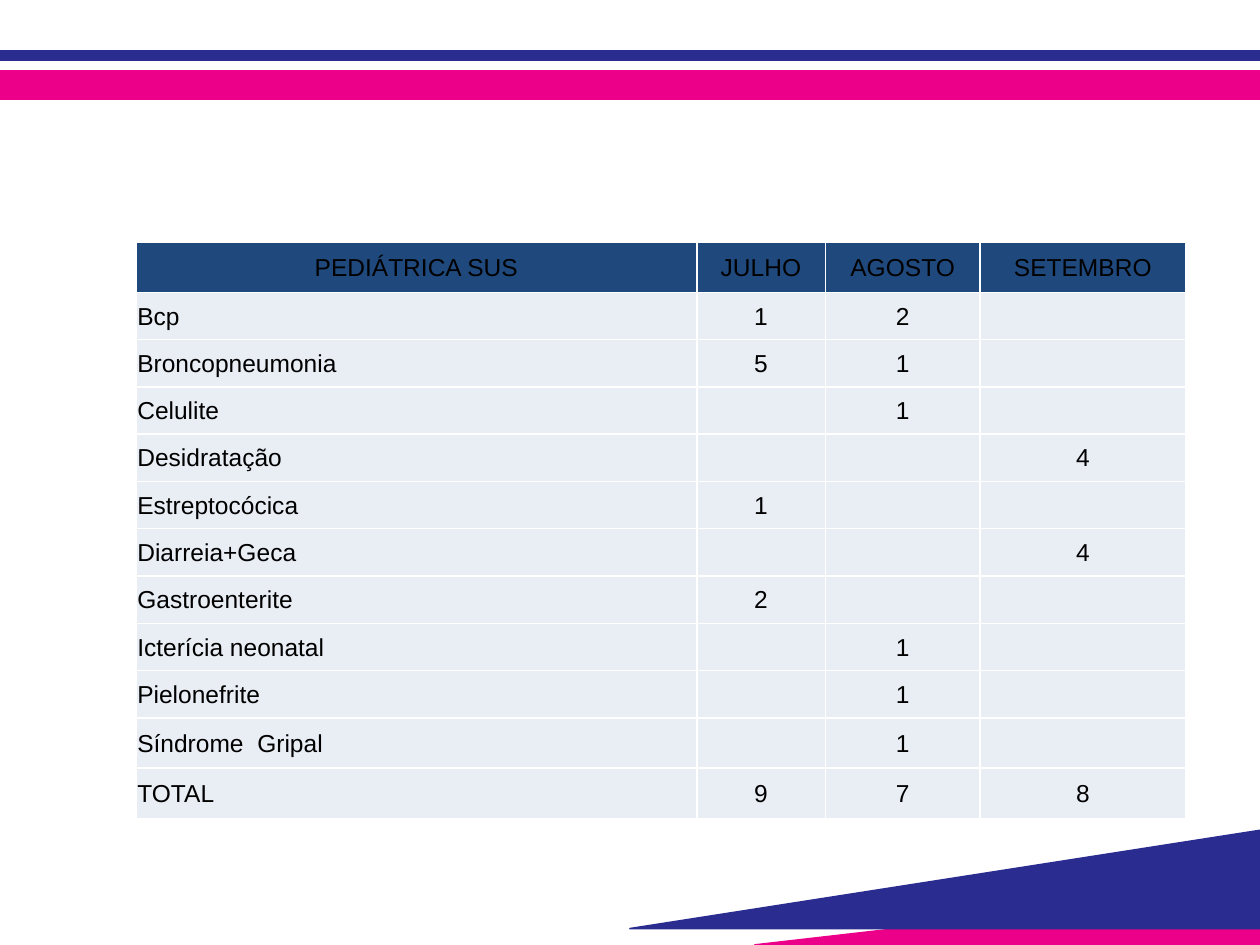
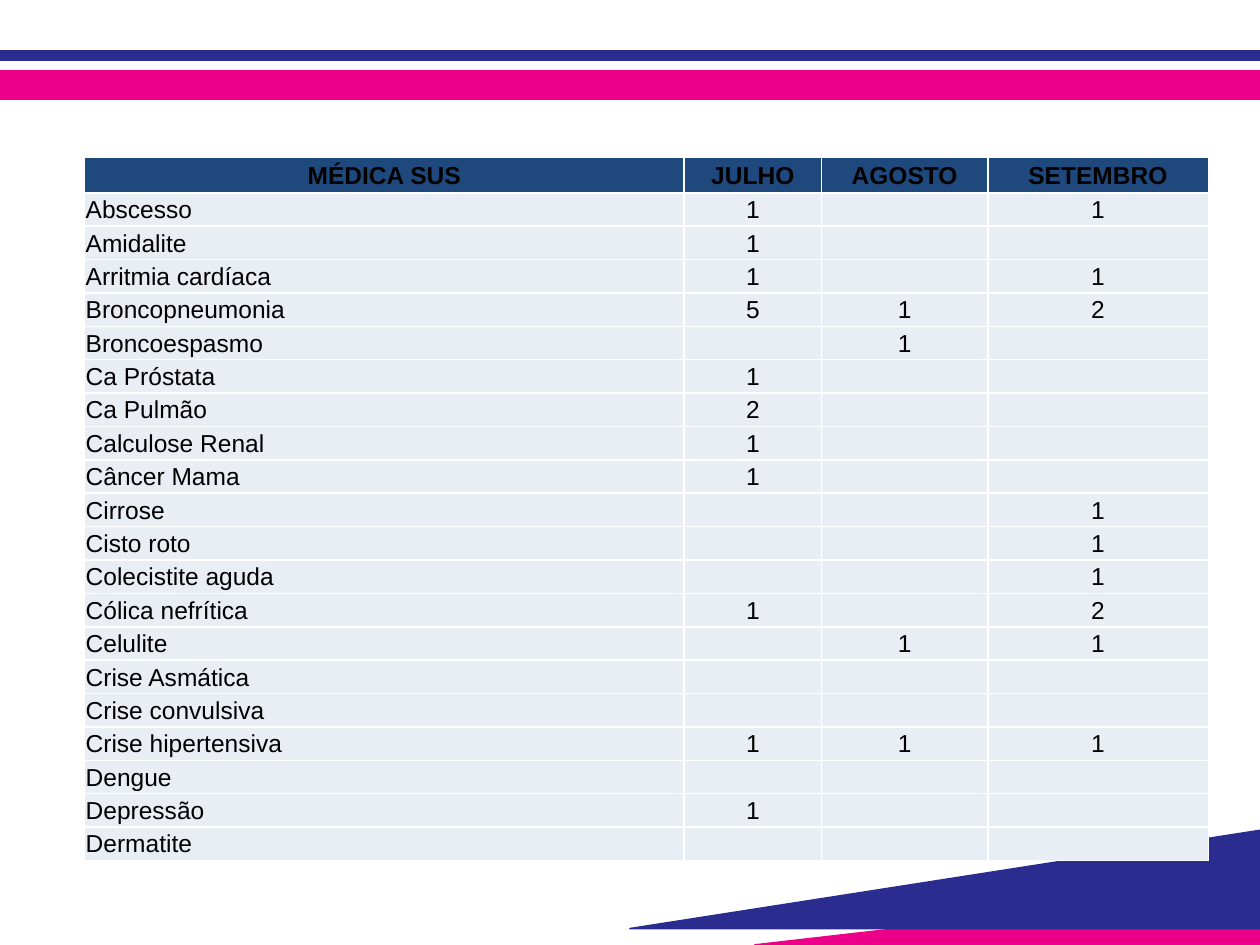
from lxml import etree
from pptx import Presentation
from pptx.dml.color import RGBColor
from pptx.enum.shapes import MSO_SHAPE as Shape
from pptx.enum.text import MSO_ANCHOR as Anchor, PP_ALIGN as Align
from pptx.oxml.ns import qn
from pptx.util import Inches, Pt

COLORS = {
    "navy": "2B2C90",
    "pink": "EC0089",
    "header": "1F497D",
    "body": "E9EDF4",
    "border": "FFFFFF",
    "text": "000000",
}
FONT = "Arial"
TEXT_SIZE = 14
BLANK_LAYOUT = 6
PAGE_WIDTH, PAGE_HEIGHT = 10, 7.5
MONTHS = ["JULHO", "AGOSTO", "SETEMBRO"]

PEDIATRIC = [
    ("Bcp", 1, 2, ""),
    ("Broncopneumonia", 5, 1, ""),
    ("Celulite", "", 1, ""),
    ("Desidratação", "", "", 4),
    ("Estreptocócica", 1, "", ""),
    ("Diarreia+Geca", "", "", 4),
    ("Gastroenterite", 2, "", ""),
    ("Icterícia neonatal", "", 1, ""),
    ("Pielonefrite", "", 1, ""),
    ("Síndrome  Gripal", "", 1, ""),
    ("TOTAL", 9, 7, 8),
]
MEDICAL = [
    ("Abscesso", 1, "", 1),
    ("Amidalite", 1, "", ""),
    ("Arritmia cardíaca", 1, "", 1),
    ("Broncopneumonia", 5, 1, 2),
    ("Broncoespasmo", "", 1, ""),
    ("Ca Próstata", 1, "", ""),
    ("Ca Pulmão", 2, "", ""),
    ("Calculose Renal", 1, "", ""),
    ("Câncer Mama", 1, "", ""),
    ("Cirrose", "", "", 1),
    ("Cisto roto", "", "", 1),
    ("Colecistite aguda", "", "", 1),
    ("Cólica nefrítica", 1, "", 2),
    ("Celulite", "", 1, 1),
    ("Crise Asmática", "", "", ""),
    ("Crise convulsiva", "", "", ""),
    ("Crise hipertensiva", 1, 1, 1),
    ("Dengue", "", "", ""),
    ("Depressão", 1, "", ""),
    ("Dermatite", "", "", ""),
]


def paint(shape, color):
    """Give a shape one colour for fill and outline."""
    shape.shadow.inherit = False
    shape.fill.solid()
    shape.fill.fore_color.rgb = RGBColor.from_string(COLORS[color])
    shape.line.color.rgb = RGBColor.from_string(COLORS[color])
    shape.line.width = Pt(0.96)


def add_band(page, top, height, color):
    band = page.shapes.add_shape(
        Shape.RECTANGLE, 0, Inches(top), Inches(PAGE_WIDTH), Inches(height))
    paint(band, color)


def add_wedge(page, box, color):
    """Right triangle rising from the lower left to the upper right of its box."""
    left, top, width, height = map(Inches, box)
    builder = page.shapes.build_freeform(left + width, top)
    builder.add_line_segments([(left, top + height), (left + width, top + height)])
    paint(builder.convert_to_shape(), color)


def add_frame(page):
    """Bands at the top and wedges at the bottom of every slide."""
    add_band(page, 0.4, 0.08, "navy")
    add_band(page, 0.56, 0.23, "pink")
    add_wedge(page, (5.99, 7.04, 4.01, 0.46), "pink")
    add_wedge(page, (5, 6.59, 5, 0.78), "navy")


def write(cell, text, bold=False, align=Align.LEFT):
    cell.vertical_anchor = Anchor.MIDDLE
    cell.margin_left = cell.margin_right = cell.margin_top = Inches(0.01)
    cell.margin_bottom = 0
    para = cell.text_frame.paragraphs[0]
    para.alignment = align
    if text == "":
        # An empty cell keeps the text size, so that its row does not grow
        etree.SubElement(para._p, qn("a:endParaRPr"), sz=str(TEXT_SIZE * 100))
        return
    span = para.add_run()
    span.text = str(text)
    span.font.name = FONT
    span.font.size = Pt(TEXT_SIZE)
    span.font.bold = bold
    span.font.color.rgb = RGBColor.from_string(COLORS["text"])


def style_cell(cell, color):
    """Thin borders on all sides, then the fill."""
    properties = cell._tc.get_or_add_tcPr()
    for side in ("lnL", "lnR", "lnT", "lnB"):
        line = etree.SubElement(properties, qn(f"a:{side}"), w=str(Pt(1)))
        fill = etree.SubElement(line, qn("a:solidFill"))
        etree.SubElement(fill, qn("a:srgbClr"), val=COLORS["border"])
    cell.fill.solid()
    cell.fill.fore_color.rgb = RGBColor.from_string(COLORS[color])


def add_case_table(page, box, title, cases, widths, tall_rows, bold_header=False):
    """Cases by month; rows not named in tall_rows share the remaining height."""
    rows = [(title, *MONTHS), *cases]
    table = page.shapes.add_table(len(rows), len(widths), *map(Inches, box)).table
    table.first_row = table.horz_banding = False
    for column, width in zip(table.columns, widths):
        column.width = Inches(width)
    shared = (box[3] - sum(tall_rows.values())) / (len(rows) - len(tall_rows))
    for row_index, values in enumerate(rows):
        is_header = row_index == 0
        table.rows[row_index].height = Inches(tall_rows.get(row_index, shared))
        for column_index, value in enumerate(values):
            cell = table.cell(row_index, column_index)
            centred = is_header or column_index > 0
            style_cell(cell, "header" if is_header else "body")
            write(cell, value, bold=is_header and bold_header,
                  align=Align.CENTER if centred else Align.LEFT)


def add_case_page(deck, **table_format):
    page = deck.slides.add_slide(deck.slide_layouts[BLANK_LAYOUT])
    add_frame(page)
    add_case_table(page, **table_format)


def main():
    deck = Presentation()
    deck.slide_width, deck.slide_height = Inches(PAGE_WIDTH), Inches(PAGE_HEIGHT)

    # Pediatric cases
    add_case_page(deck, box=(1.08, 1.92, 8.33, 4.58), title="PEDIÁTRICA SUS",
                  cases=PEDIATRIC, widths=(4.45, 1.02, 1.23, 1.63),
                  tall_rows={0: 0.4, 10: 0.4, 11: 0.4})

    # Medical cases
    add_case_page(deck, box=(0.67, 1.25, 8.92, 5.58), title="MÉDICA SUS",
                  cases=MEDICAL, widths=(4.76, 1.09, 1.32, 1.75),
                  tall_rows={0: 0.28}, bold_header=True)

    deck.save("out.pptx")


if __name__ == "__main__":
    main()
